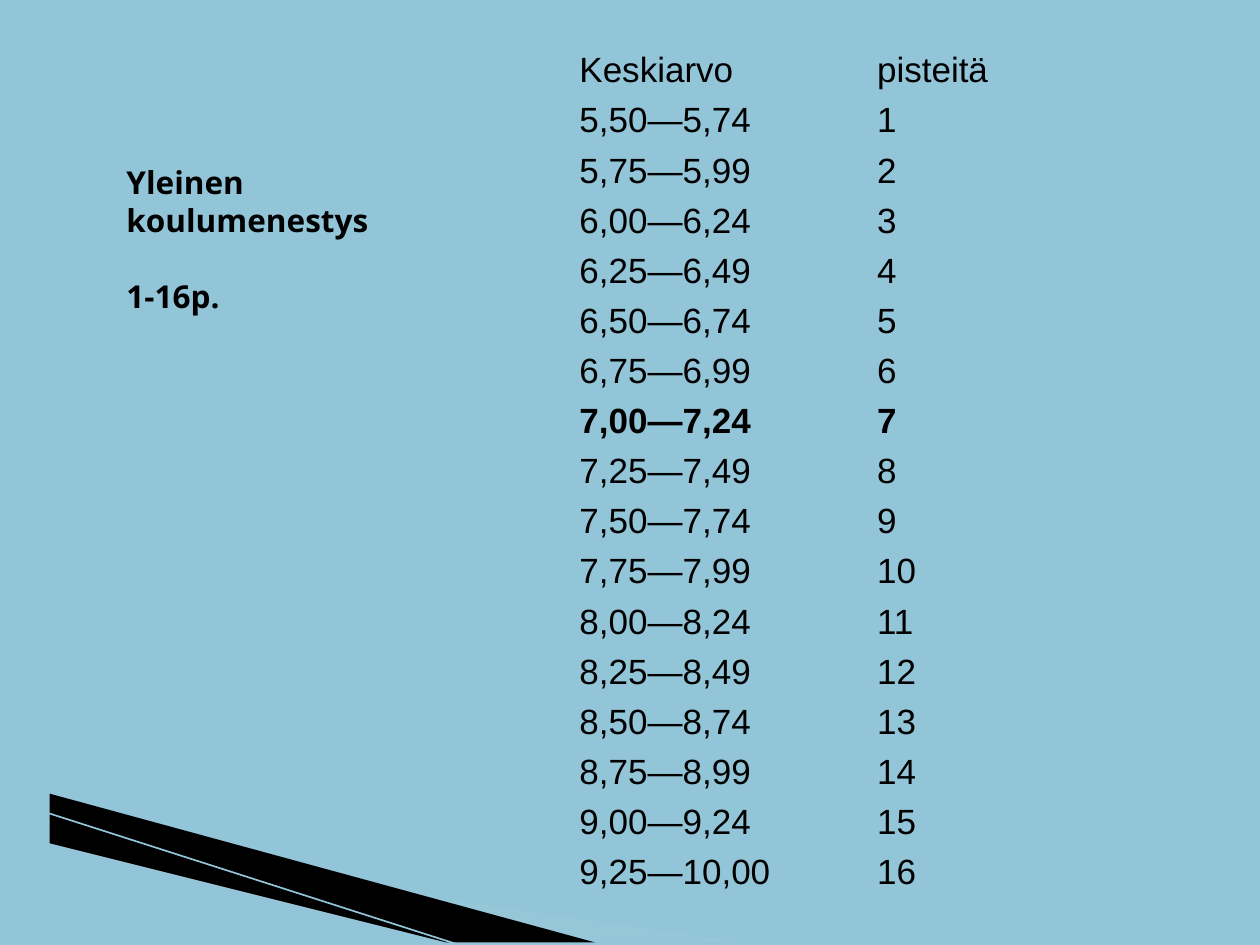
import lxml.etree
import pptx
import pptx.dml.color
import pptx.enum.shapes
import pptx.enum.text
import pptx.oxml.ns
import pptx.util

Cm = pptx.util.Cm
Pt = pptx.util.Pt
RGBColor = pptx.dml.color.RGBColor
qn = pptx.oxml.ns.qn

BACKGROUND = RGBColor(0x93, 0xC5, 0xD8)
PALE_BLUE = RGBColor(0x9C, 0xCA, 0xDC)
BLACK = RGBColor(0, 0, 0)
PLAIN_TABLE_STYLE = "{2D5ABB26-0587-4C30-8999-92F81FD0307C}"


class SlideBuilder:
    def __init__(self, slide):
        self.slide = slide
        self.heading_font = "Noto Sans"
        self.table_font = "Arial"
        fill = slide.background.fill
        fill.solid()
        fill.fore_color.rgb = BACKGROUND

    def wedge(self, points, color, opacity=100):
        """Draw a closed outline through points given in centimetres."""
        builder = self.slide.shapes.build_freeform(*points[0], scale=Cm(1))
        builder.add_line_segments(points[1:], close=True)
        shape = builder.convert_to_shape()
        shape.shadow.inherit = False
        shape.line.fill.background()
        shape.fill.solid()
        shape.fill.fore_color.rgb = color
        if opacity < 100:
            color_element = shape._element.spPr.find(".//" + qn("a:srgbClr"))
            alpha = lxml.etree.SubElement(color_element, qn("a:alpha"))
            alpha.set("val", str(opacity * 1000))

    def line(self, start, end, color, width):
        connector = self.slide.shapes.add_connector(
            pptx.enum.shapes.MSO_CONNECTOR.STRAIGHT,
            *(Cm(length) for length in (*start, *end)))
        connector.line.color.rgb = color
        connector.line.width = Pt(width)
        lxml.etree.SubElement(connector._element.spPr, qn("a:effectLst"))

    def style(self, paragraph, font_name, size, bold):
        font = paragraph.font
        font.name = font_name
        font.size = Pt(size)
        font.bold = bold
        font.color.rgb = BLACK

    def heading(self, left, top, width, height, texts):
        """Add bold paragraphs with one line of space between them."""
        box = self.slide.shapes.add_textbox(Cm(left), Cm(top), Cm(width), Cm(height))
        frame = box.text_frame
        frame.word_wrap = True
        line_height = Pt(21.7)
        for index, text in enumerate(texts):
            paragraph = frame.add_paragraph() if index else frame.paragraphs[0]
            paragraph.text = text
            paragraph.line_spacing = line_height
            if index:
                paragraph.space_before = line_height
            self.style(paragraph, self.heading_font, 18, True)

    def table(self, left, top, column_width, row_height, rows, bold_row):
        row_count, column_count = len(rows), len(rows[0])
        shape = self.slide.shapes.add_table(
            row_count, column_count, Cm(left), Cm(top),
            Cm(column_width * column_count), Cm(row_height * row_count))
        table = shape.table
        table.first_row = False
        table.horz_banding = False
        shape._element.find(".//" + qn("a:tableStyleId")).text = PLAIN_TABLE_STYLE
        for row_index, row in enumerate(rows):
            for column_index, text in enumerate(row):
                cell = table.cell(row_index, column_index)
                cell.fill.background()
                cell.margin_left = cell.margin_right = Cm(0.18)
                cell.margin_top = cell.margin_bottom = Cm(0.08)
                cell.vertical_anchor = pptx.enum.text.MSO_ANCHOR.MIDDLE
                cell.text = text
                self.style(cell.text_frame.paragraphs[0], self.table_font, 20,
                           row_index == bold_row)


def grade(hundredths):
    return f"{hundredths // 100},{hundredths % 100:02d}"


def score_rows():
    """Return the heading row and one row for each quarter grade."""
    rows = [("Keskiarvo", "pisteitä")]
    for points in range(1, 17):
        low = 525 + 25 * points
        high = 1000 if points == 16 else low + 24
        rows.append((f"{grade(low)}—{grade(high)}", str(points)))
    return rows


def main():
    presentation = pptx.Presentation()
    presentation.slide_width = Cm(25.4)
    presentation.slide_height = Cm(19.05)
    slide = presentation.slides.add_slide(presentation.slide_layouts[6])
    builder = SlideBuilder(slide)
    builder.wedge([(1.4, 16.54), (15.11, 19.08), (11.58, 19.08), (1.4, 16.51)],
                  PALE_BLUE, opacity=40)
    builder.wedge([(1.35, 16.48), (11.61, 19.08), (9.45, 19.1), (1.37, 16.51)], BLACK)
    builder.line((0, 16.08), (9.42, 19.1), BACKGROUND, 0.95)
    builder.table(11.5, 0.92, 6, 1.01, score_rows(), bold_row=7)
    builder.heading(2.3, 3.15, 6.8, 3.33, ["Yleinen koulumenestys", "1-16p."])
    presentation.save("out.pptx")


if __name__ == "__main__":
    main()
